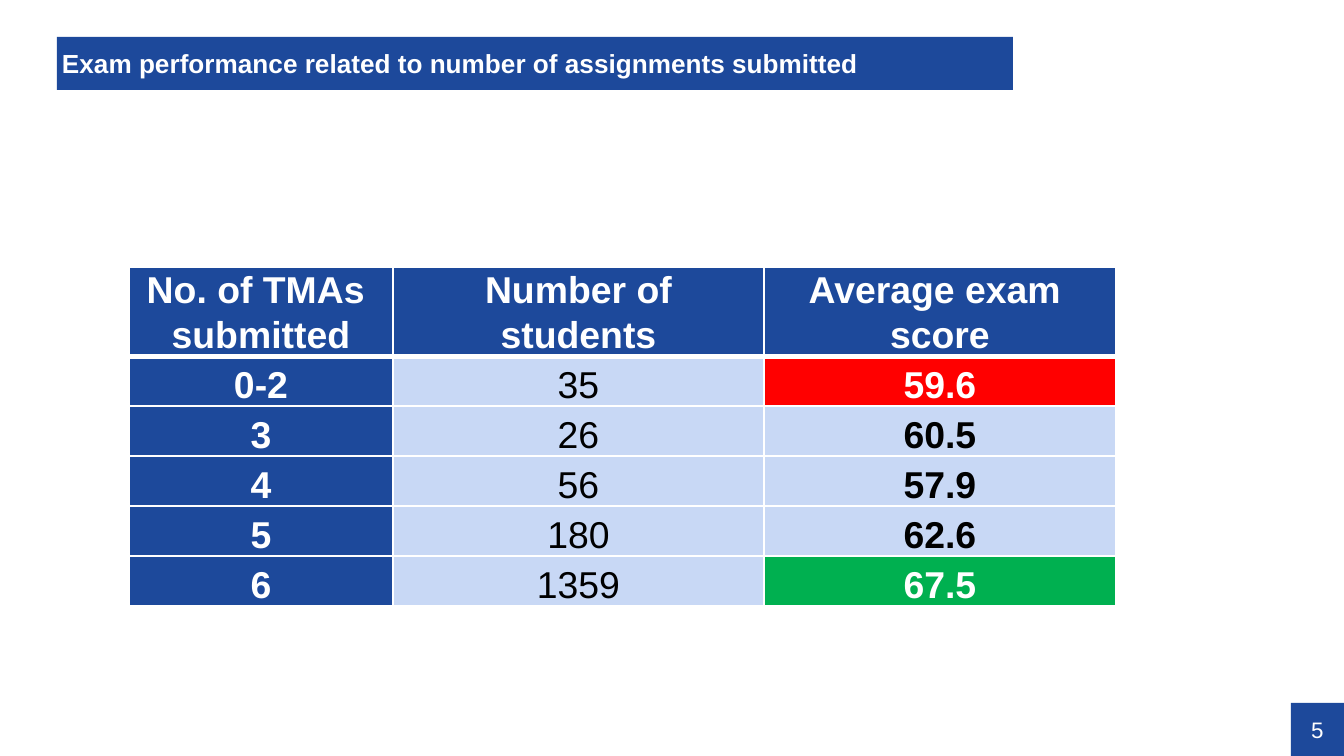
from lxml import etree
from pptx import Presentation
from pptx.dml.color import RGBColor
from pptx.enum.shapes import MSO_SHAPE
from pptx.enum.text import MSO_ANCHOR, MSO_AUTO_SIZE, PP_ALIGN
from pptx.oxml.ns import qn
from pptx.util import Pt

LEFT, CENTER = PP_ALIGN.LEFT, PP_ALIGN.CENTER
MIDDLE, BOTTOM = MSO_ANCHOR.MIDDLE, MSO_ANCHOR.BOTTOM

BLUE = RGBColor(0x1D, 0x49, 0x9B)
PALE = RGBColor(0xC8, 0xD8, 0xF5)
RED = RGBColor(0xFF, 0x00, 0x00)
GREEN = RGBColor(0x00, 0xB0, 0x50)
WHITE = RGBColor(0xFF, 0xFF, 0xFF)
BLACK = RGBColor(0x00, 0x00, 0x00)

TITLE = "Exam performance related to number of assignments submitted"
PAGE = "5"
ROWS = [
    ("No. of TMAs \nsubmitted", "Number of students", "Average exam \nscore"),
    ("0-2", "35", "59.6"),
    ("3", "26", "60.5"),
    ("4", "56", "57.9"),
    ("5", "180", "62.6"),
    ("6", "1359", "67.5"),
]
MARKS = {(1, 2): RED, (5, 2): GREEN}
WIDTHS = [264, 371, 352]
HEAD_H, ROW_H = 65, 50

SCALE = 914400 / 134.4


def px(n):
    return round(n * SCALE)


def write(frame, text, size, color, bold, align, space):
    para = frame.paragraphs[0]
    para.text = text
    para.alignment = align
    para.line_spacing = space
    for run in para.runs:
        font = run.font
        font.name, font.size, font.bold = "Arial", Pt(size), bold
        font.color.rgb = color


def box(shape, place, inset):
    """Place a plain blue box and prepare its text frame."""
    shape.left, shape.top, shape.width, shape.height = map(px, place)
    shape.fill.solid()
    shape.fill.fore_color.rgb = BLUE
    shape.line.fill.background()
    frame = shape.text_frame
    frame.word_wrap = True
    frame.auto_size = MSO_AUTO_SIZE.NONE
    frame.vertical_anchor = MIDDLE
    frame.margin_left, frame.margin_top = map(px, inset)
    frame.margin_right = frame.margin_bottom = 0
    return frame


def edge(cell, side, points):
    props = cell._tc.get_or_add_tcPr()
    line = etree.SubElement(props, qn("a:ln" + side), w=str(Pt(points)))
    fill = etree.SubElement(line, qn("a:solidFill"))
    etree.SubElement(fill, qn("a:srgbClr"), val=str(WHITE))


def style(cell, row, col):
    top, bottom = (3 if row == 1 else 1), (3 if row == 0 else 1)
    for side, points in (("L", 1), ("R", 1), ("T", top), ("B", bottom)):
        edge(cell, side, points)
    head = row == 0 or col == 0
    mark = MARKS.get((row, col))
    cell.fill.solid()
    cell.fill.fore_color.rgb = mark or (BLUE if head else PALE)
    cell.vertical_anchor = BOTTOM
    cell.margin_left = cell.margin_right = px(10)
    cell.margin_top = cell.margin_bottom = 0
    color = WHITE if head or mark else BLACK
    write(cell.text_frame, ROWS[row][col], 20, color, head or col == 2,
          CENTER, 1.07)


def main():
    deck = Presentation()
    deck.slide_width, deck.slide_height = px(1344), px(756)
    slide = deck.slides.add_slide(deck.slide_layouts[5])
    shapes = slide.shapes

    frame = box(shapes.title, (57, 37, 956, 53), (5, 3))
    write(frame, TITLE, 14, WHITE, True, LEFT, 0.9)

    number = shapes.add_shape(MSO_SHAPE.RECTANGLE, 0, 0, 0, 0)
    number.shadow.inherit = False
    frame = box(number, (1291, 703, 53, 53), (0, 0))
    write(frame, PAGE, 12, WHITE, False, CENTER, 1.0)

    heights = [HEAD_H] + [ROW_H] * (len(ROWS) - 1)
    table = shapes.add_table(len(ROWS), len(WIDTHS), px(129), px(267),
                             px(sum(WIDTHS)), px(sum(heights))).table
    for col, width in zip(table.columns, WIDTHS):
        col.width = px(width)
    for row, height in zip(table.rows, heights):
        row.height = px(height)
    for r in range(len(ROWS)):
        for c in range(len(WIDTHS)):
            style(table.cell(r, c), r, c)

    deck.save("out.pptx")


if __name__ == "__main__":
    main()
